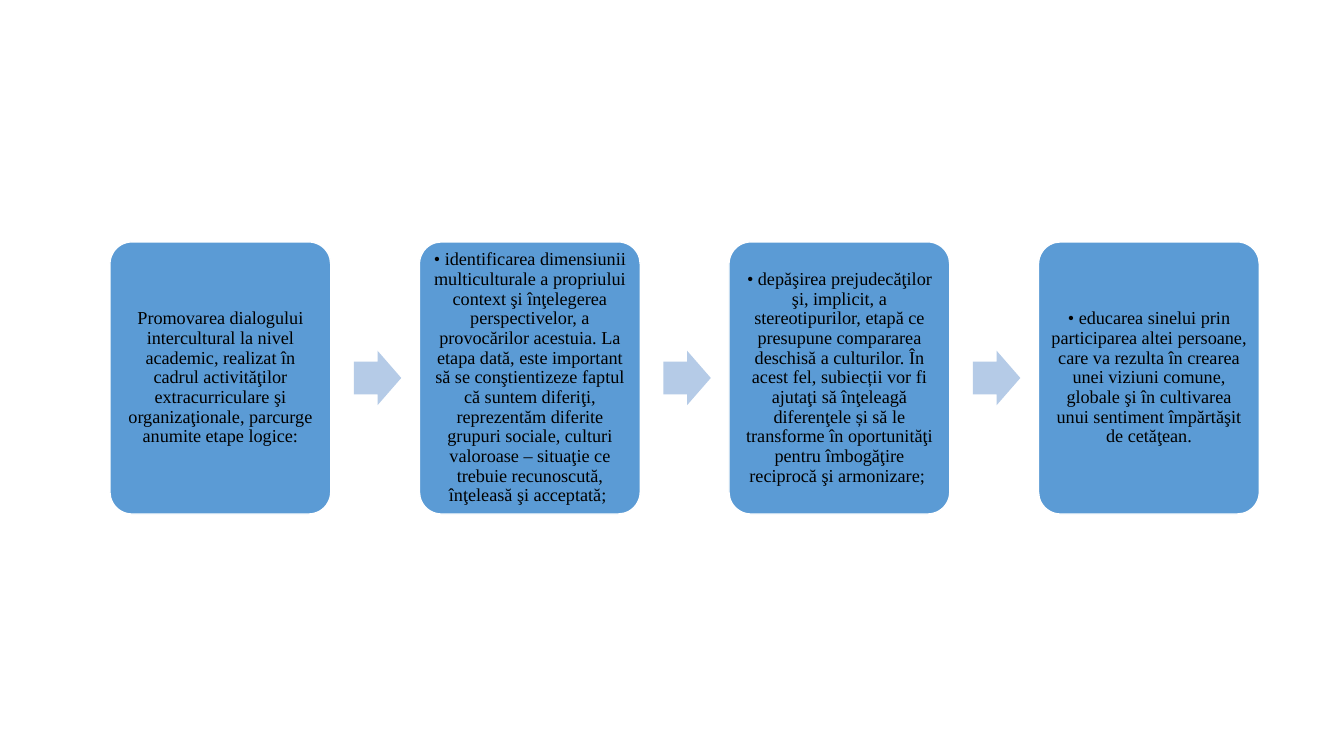
from pptx import Presentation
from pptx.dml.color import RGBColor
from pptx.enum.shapes import MSO_SHAPE as SHAPE
from pptx.enum.text import MSO_ANCHOR, PP_ALIGN
from pptx.util import Inches, Pt

COLORS = {"stage": "5B9BD5", "border": "FFFFFF", "arrow": "B5CBE7", "text": "000000"}
STAGES = [
    "Promovarea dialogului intercultural la nivel academic, realizat în cadrul "
    "activităţilor extracurriculare şi organizaţionale, parcurge anumite etape logice:",
    "• identificarea dimensiunii multiculturale a propriului context şi înţelegerea "
    "perspectivelor, a provocărilor acestuia. La etapa dată, este important să se "
    "conştientizeze faptul că suntem diferiţi, reprezentăm diferite grupuri sociale, "
    "culturi valoroase – situaţie ce trebuie recunoscută, înţeleasă şi acceptată; ",
    "• depăşirea prejudecăţilor şi, implicit, a stereotipurilor, etapă ce presupune "
    "compararea deschisă a culturilor. În acest fel, subiecții vor fi ajutaţi să "
    "înţeleagă diferenţele și să le transforme în oportunităţi pentru îmbogăţire "
    "reciprocă şi armonizare; ",
    "• educarea sinelui prin participarea altei persoane, care va rezulta în crearea "
    "unei viziuni comune, globale şi în cultivarea unui sentiment împărtăşit de cetăţean.",
]
FIRST_LEFT, PITCH = 1.09, 3.07
STAGE_TOP, STAGE_WIDTH, STAGE_HEIGHT = 2.4, 2.19, 2.7
ARROW_OFFSET, ARROW_WIDTH, ARROW_HEIGHT = 2.42, 0.47, 0.54


def add_filled(preset, left, top, width, height, color):
    shape = slide.shapes.add_shape(
        preset, Inches(left), Inches(top), Inches(width), Inches(height))
    shape.shadow.inherit = False
    shape.fill.solid()
    shape.fill.fore_color.rgb = RGBColor.from_string(COLORS[color])
    return shape


prs = Presentation()
prs.slide_width = Inches(13.33)
prs.slide_height = Inches(7.5)
slide = prs.slides.add_slide(prs.slide_layouts[6])

for i, wording in enumerate(STAGES):
    left = FIRST_LEFT + i * PITCH
    stage = add_filled(SHAPE.ROUNDED_RECTANGLE, left, STAGE_TOP,
                       STAGE_WIDTH, STAGE_HEIGHT, "stage")
    stage.adjustments[0] = 0.1
    stage.line.color.rgb = RGBColor.from_string(COLORS["border"])
    stage.line.width = Pt(1)

    frame = stage.text_frame
    frame.word_wrap = True
    frame.vertical_anchor = MSO_ANCHOR.MIDDLE
    frame.margin_left = frame.margin_right = Inches(0.05)
    frame.margin_top = frame.margin_bottom = Inches(0.05)
    frame.text = wording
    paragraph = frame.paragraphs[0]
    paragraph.alignment = PP_ALIGN.CENTER
    paragraph.line_spacing = 0.9
    font = paragraph.runs[0].font
    font.name = "Times New Roman"
    font.size = Pt(13)
    font.color.rgb = RGBColor.from_string(COLORS["text"])

    if i < len(STAGES) - 1:
        arrow = add_filled(SHAPE.RIGHT_ARROW, left + ARROW_OFFSET,
                           STAGE_TOP + (STAGE_HEIGHT - ARROW_HEIGHT) / 2,
                           ARROW_WIDTH, ARROW_HEIGHT, "arrow")
        arrow.adjustments[0] = 0.6
        arrow.adjustments[1] = 0.5
        arrow.line.fill.background()

prs.save("out.pptx")
